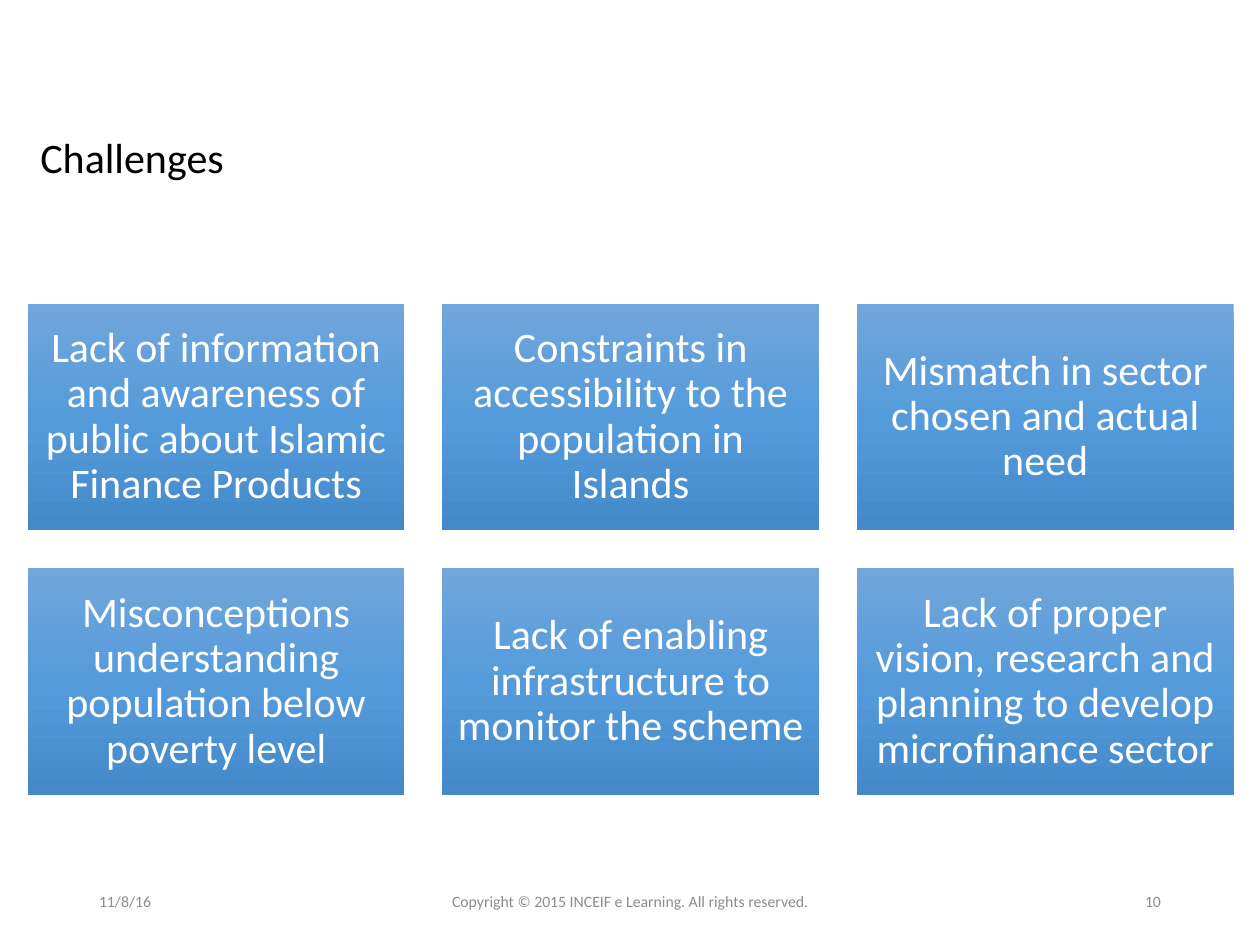
from copy import deepcopy

from pptx import Presentation
from pptx.dml.color import RGBColor
from pptx.enum import shapes, text
from pptx.oxml.ns import qn
from pptx.util import Pt

TITLE = "Challenges"
CHALLENGES = [
    "Lack of information and awareness of public about Islamic Finance Products",
    "Constraints in accessibility to the population in Islands",
    "Mismatch in sector chosen and actual need",
    "Misconceptions understanding population below poverty level",
    "Lack of enabling infrastructure to monitor the scheme",
    "Lack of proper vision, research and planning to develop microfinance sector",
]
ALIGN = text.PP_ALIGN
FOOTER = [  # text, left, width, alignment
    ("11/8/16", 49.5, 162, ALIGN.LEFT),
    ("Copyright © 2015 INCEIF e Learning. All rights reserved.", 238.5, 243, ALIGN.CENTER),
    ("10", 508.5, 162, ALIGN.RIGHT),
]
COLORS = {"title": "000000", "card": "FFFFFF", "footer": "8C8C8C",
          "top": "71A6DB", "middle": "559BDB", "bottom": "448ACA"}
FONT = "Calibri"
COLUMNS = 3
LEFT, TOP = 15.84, 173.52
CARD_W, CARD_H, GAP = 215.28, 129.6, 21.6


def write(sp, content, size, color, align=ALIGN.LEFT, spacing=None, inset=None):
    tf = sp.text_frame
    tf.word_wrap = True
    tf.auto_size = text.MSO_AUTO_SIZE.NONE
    tf.vertical_anchor = text.MSO_ANCHOR.MIDDLE
    if inset is not None:
        tf.margin_left = tf.margin_right = tf.margin_top = tf.margin_bottom = Pt(inset)
    p = tf.paragraphs[0]
    p.alignment = align
    p.line_spacing = spacing
    r = p.add_run()
    r.text = content
    r.font.name = FONT
    r.font.size = Pt(size)
    r.font.color.rgb = RGBColor.from_string(COLORS[color])


def fill_gradient(sp, names):
    """Fill from top to bottom with evenly spaced colours."""
    sp.fill.gradient()
    sp.fill.gradient_angle = 270
    stops = sp._element.spPr.find(qn("a:gradFill")).find(qn("a:gsLst"))
    while len(stops) < len(names):
        stops.append(deepcopy(stops[-1]))
    for i, (stop, name) in enumerate(zip(sp.fill.gradient_stops, names)):
        stop.position = i / (len(names) - 1)
        stop.color.rgb = RGBColor.from_string(COLORS[name])


prs = Presentation()
prs.slide_width, prs.slide_height = Pt(720), Pt(540)
s = prs.slides.add_slide(prs.slide_layouts[5])

title = s.shapes.title
title.left, title.top, title.width, title.height = Pt(15.84), Pt(61.2), Pt(655.2), Pt(60.48)
write(title, TITLE, 24, "title", spacing=0.9)

for i, challenge in enumerate(CHALLENGES):
    row, col = divmod(i, COLUMNS)
    card = s.shapes.add_shape(
        shapes.MSO_SHAPE.RECTANGLE,
        Pt(LEFT + col * (CARD_W + GAP)), Pt(TOP + row * (CARD_H + GAP)),
        Pt(CARD_W), Pt(CARD_H))
    card.shadow.inherit = False
    card.line.fill.background()
    fill_gradient(card, ["top", "middle", "bottom"])
    write(card, challenge, 24, "card", align=ALIGN.CENTER, spacing=0.9, inset=7.2)

for content, left, width, align in FOOTER:
    box = s.shapes.add_textbox(Pt(left), Pt(500.5), Pt(width), Pt(28.75))
    write(box, content, 9, "footer", align=align)

prs.save("out.pptx")
